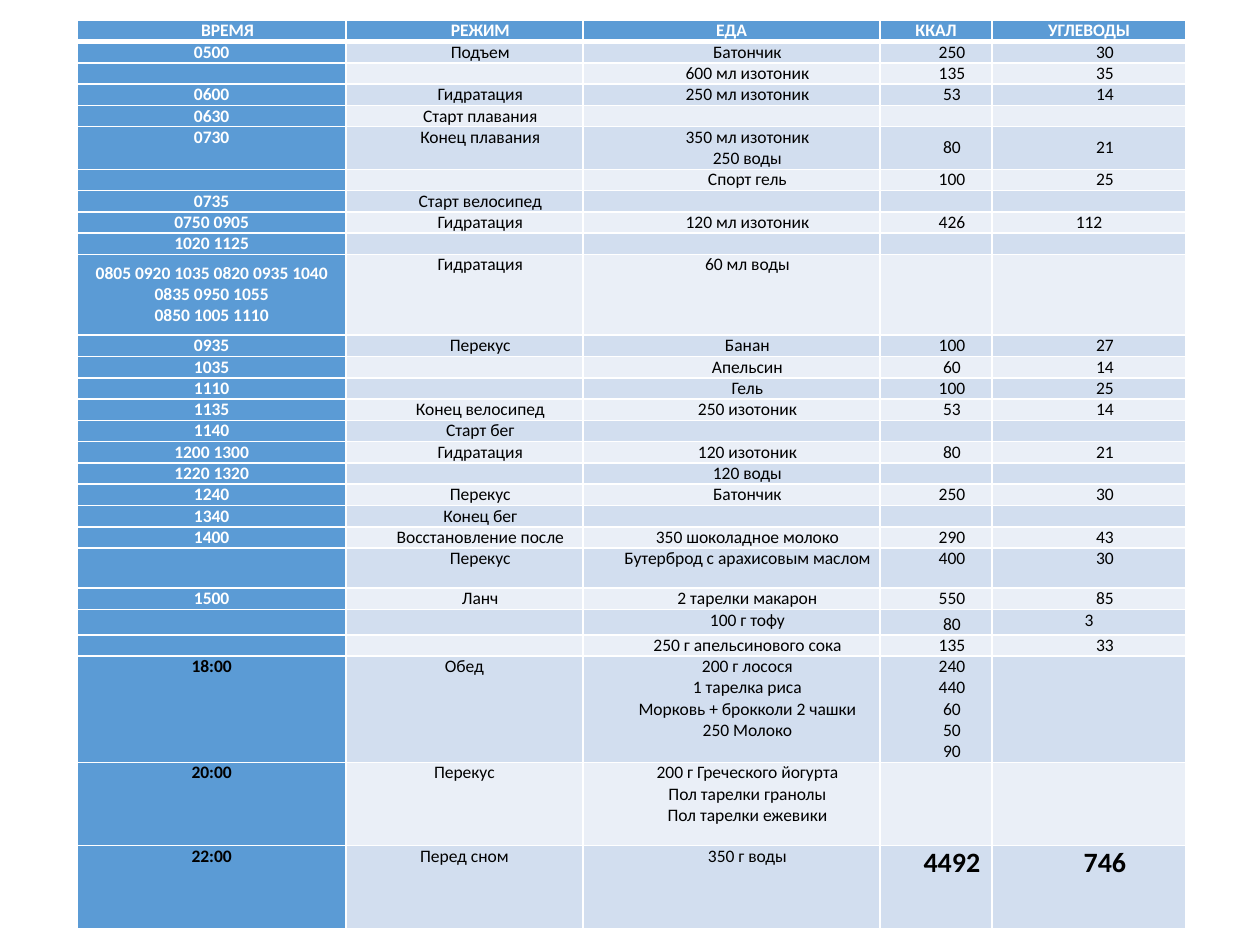
"""Build a race-day nutrition timetable slide."""
from lxml.etree import SubElement
from pptx import Presentation
from pptx.dml.color import RGBColor
from pptx.enum.text import MSO_ANCHOR, PP_ALIGN
from pptx.oxml import parse_xml
from pptx.oxml.ns import nsdecls, qn
from pptx.util import Cm, Pt

BLUE = RGBColor(0x5B, 0x9B, 0xD5)
BAND_DARK = RGBColor(0xD2, 0xDE, 0xEF)
BAND_LIGHT = RGBColor(0xEA, 0xEF, 0xF7)
WHITE = RGBColor(0xFF, 0xFF, 0xFF)
BLACK = RGBColor(0x00, 0x00, 0x00)

ANCHORS = {"t": MSO_ANCHOR.TOP, "m": MSO_ANCHOR.MIDDLE, "b": MSO_ANCHOR.BOTTOM}
COLUMN_WIDTHS = [5.41, 4.78, 5.99, 2.26, 3.91]
LINE_HEIGHT = 0.41
SPECIAL_HEIGHTS = {5: 0.81, 10: 1.63, 21: 0.81, 23: 0.51, 25: 1.68, 26: 1.68, 27: 1.68}
INDENT = Cm(0.64)
EVENING_ROWS = (25, 26, 27)
TOTALS = {(27, 3), (27, 4)}
INDENTED_HEADERS = {(0, 0), (0, 1)}
UNINDENTED = {(8, 4), (23, 4)} | {(row, 1) for row in EVENING_ROWS}

SCHEDULE = [
    ("ttttt", "ВРЕМЯ", "РЕЖИМ", "ЕДА", "ККАЛ", "УГЛЕВОДЫ"),
    ("bbbbb", "0500", "Подъем", "Батончик", "250", "30"),
    ("ttttt", "", "", "600 мл изотоник", "135", "35"),
    ("mmmmm", "0600", "Гидратация", "250 мл изотоник", "53", "14"),
    ("mmmmm", "0630", "Старт плавания", "", "", ""),
    ("ttbmm", "0730", "Конец плавания", "350 мл изотоник\n250 воды", "80", "21"),
    ("tttmt", "", "", "Спорт гель", "100", "25"),
    ("mmmmm", "0735", "Старт велосипед", "", "", ""),
    ("bbbbb", "0750 0905", "Гидратация", "120 мл изотоник", "426", "112"),
    ("ttttt", "1020 1125", "", "", "", ""),
    ("mtttt", "0805 0920 1035 0820 0935 1040\n0835 0950 1055\n0850 1005 1110",
     "Гидратация", "60 мл воды", "", ""),
    ("mmmmm", "0935", "Перекус", "Банан", "100", "27"),
    ("mmmmm", "1035", "", "Апельсин", "60", "14"),
    ("bbmbm", "1110", "", "Гель", "100", "25"),
    ("bbbbb", "1135", "Конец велосипед", "250 изотоник", "53", "14"),
    ("mmmmm", "1140", "Старт бег", "", "", ""),
    ("mmmmm", "1200 1300", "Гидратация", "120 изотоник", "80", "21"),
    ("mmmmm", "1220 1320", "", "120 воды", "", ""),
    ("mmmmm", "1240", "Перекус", "Батончик", "250", "30"),
    ("mmmmm", "1340", "Конец бег", "", "", ""),
    ("bbbbb", "1400", "Восстановление после", "350 шоколадное молоко", "290", "43"),
    ("ttttt", "", "Перекус", "Бутерброд с арахисовым маслом", "400", "30"),
    ("bbbbb", "1500", "Ланч", "2 тарелки макарон", "550", "85"),
    ("tttbt", "", "", "100 г тофу", "80", "3"),
    ("ttttt", "", "", "250 г апельсинового сока", "135", "33"),
    ("ttttt", "18:00", "Обед",
     "200 г лосося\n1 тарелка риса\nМорковь + брокколи 2 чашки\n250 Молоко",
     "240\n440\n60\n50\n90", ""),
    ("ttttt", "20:00", "Перекус",
     "200 г Греческого йогурта\nПол тарелки гранолы\nПол тарелки ежевики", "", ""),
    ("ttttt", "22:00", "Перед сном", "350 г воды", "4492", "746"),
]


def add_borders(cell, row):
    widths = {"L": 1, "R": 1, "T": 3 if row == 1 else 1, "B": 3 if row == 0 else 1}
    properties = cell._tc.get_or_add_tcPr()
    for position, (side, width) in enumerate(widths.items()):
        properties.insert(position, parse_xml(
            f'<a:ln{side} {nsdecls("a")} w="{Pt(width)}"><a:solidFill>'
            f'<a:srgbClr val="{WHITE}"/></a:solidFill></a:ln{side}>'))


def format_paragraph(paragraph, row, column):
    position = (row, column)
    heading = row == 0 or column == 0
    size = Pt(16) if position in TOTALS else Pt(10)
    paragraph.alignment = PP_ALIGN.CENTER
    paragraph.font.name = "Calibri"
    paragraph.font.size = size
    paragraph.font.bold = heading or position in TOTALS
    paragraph.font.color.rgb = WHITE if heading and row not in EVENING_ROWS else BLACK
    if position in INDENTED_HEADERS or not heading and position not in UNINDENTED:
        paragraph._p.get_or_add_pPr().set("indent", str(INDENT))
    if not paragraph.runs:
        SubElement(paragraph._p, qn("a:endParaRPr")).set("sz", str(int(size.pt * 100)))


def fill_cell(cell, text, anchor, row, column):
    cell.margin_left = cell.margin_right = Cm(0.03)
    cell.margin_top = cell.margin_bottom = 0
    cell.vertical_anchor = ANCHORS[anchor]
    cell.fill.solid()
    band = BAND_DARK if row % 2 else BAND_LIGHT
    cell.fill.fore_color.rgb = BLUE if row == 0 or column == 0 else band
    add_borders(cell, row)
    cell.text = text
    for paragraph in cell.text_frame.paragraphs:
        format_paragraph(paragraph, row, column)


def main():
    presentation = Presentation()
    presentation.slide_width, presentation.slide_height = Cm(25.4), Cm(19.05)
    slide = presentation.slides.add_slide(presentation.slide_layouts[6])
    frame = slide.shapes.add_table(len(SCHEDULE), len(COLUMN_WIDTHS),
                                   Cm(1.56), Cm(0.41), Cm(22.35), Cm(18.16))
    table = frame.table
    for column, width in zip(table.columns, COLUMN_WIDTHS):
        column.width = Cm(width)
    for row, (anchors, *texts) in enumerate(SCHEDULE):
        table.rows[row].height = Cm(SPECIAL_HEIGHTS.get(row, LINE_HEIGHT))
        for column, (text, anchor) in enumerate(zip(texts, anchors)):
            fill_cell(table.cell(row, column), text, anchor, row, column)
    frame.height = Cm(18.16)
    presentation.save("out.pptx")


if __name__ == "__main__":
    main()
